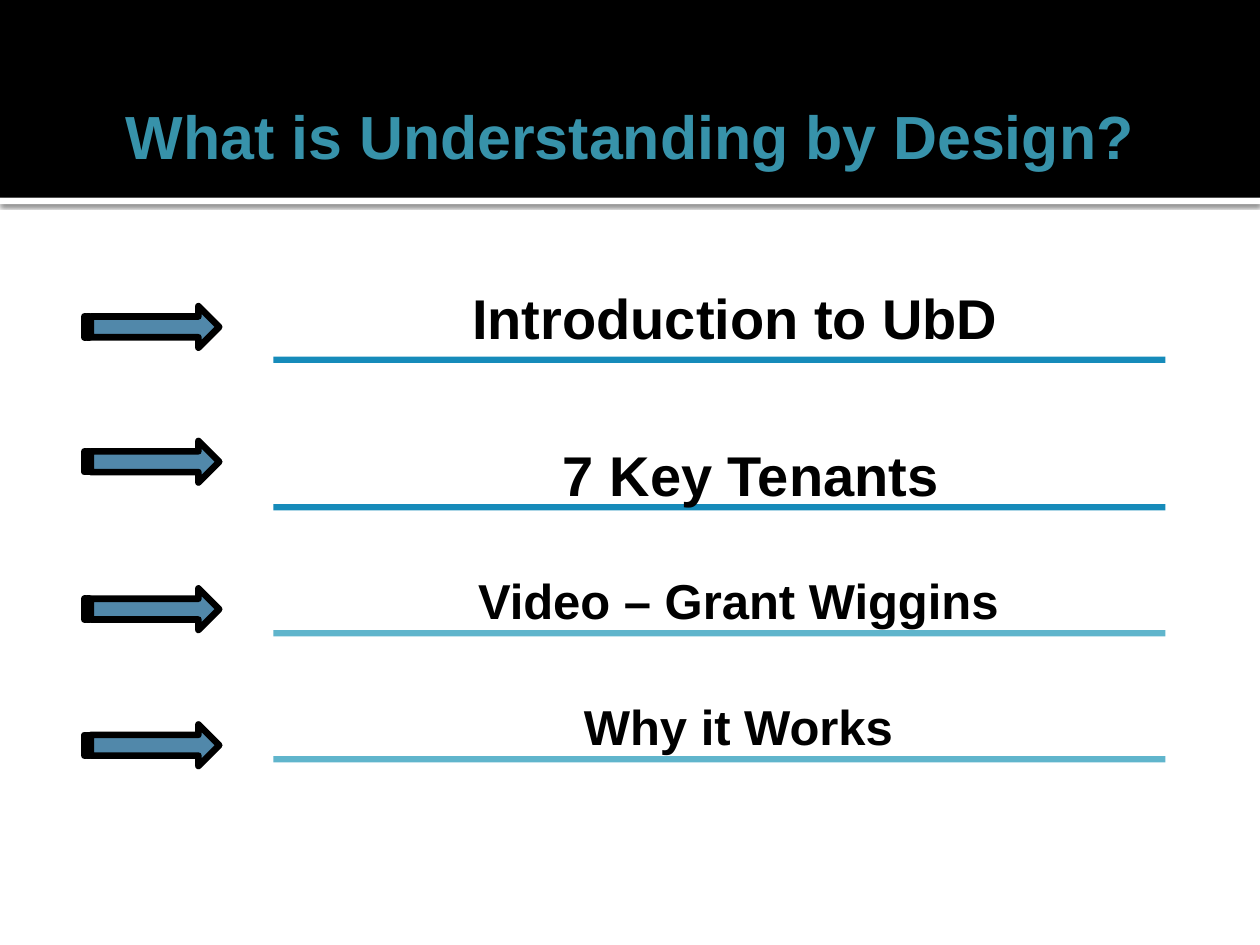
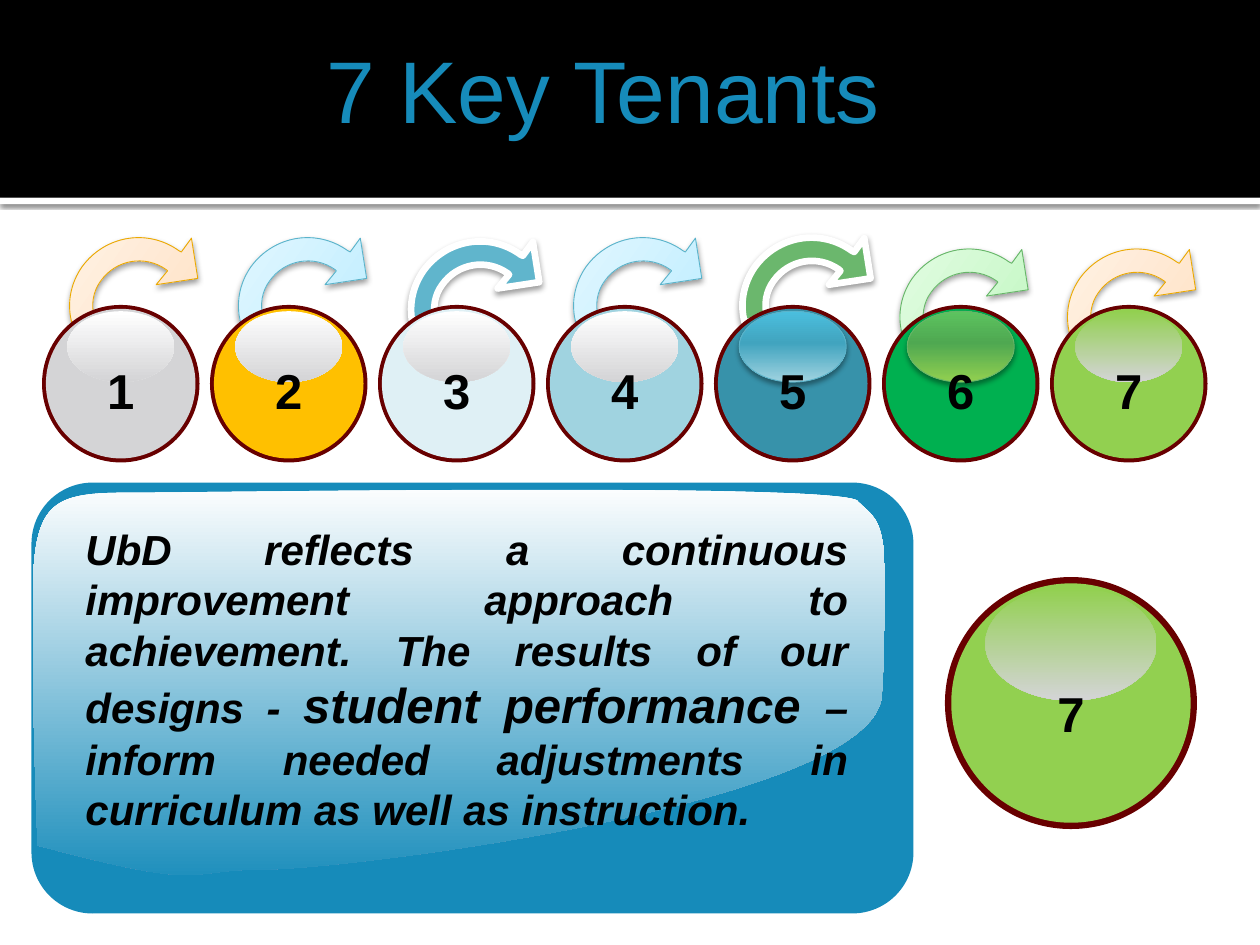
from math import cos, radians, sin

from pptx import Presentation
from pptx.dml.color import RGBColor
from pptx.enum.shapes import MSO_SHAPE
from pptx.enum.text import MSO_ANCHOR, MSO_AUTO_SIZE, PP_ALIGN
from pptx.oxml import parse_xml
from pptx.oxml.ns import nsdecls, qn
from pptx.util import Inches, Pt

RECT = MSO_SHAPE.RECTANGLE
ROUND_RECT = MSO_SHAPE.ROUNDED_RECTANGLE
OVAL = MSO_SHAPE.OVAL
STRIPED_ARROW = MSO_SHAPE.STRIPED_RIGHT_ARROW
MIDDLE, BOTTOM = MSO_ANCHOR.MIDDLE, MSO_ANCHOR.BOTTOM
CENTER, JUSTIFY = PP_ALIGN.CENTER, PP_ALIGN.JUSTIFY
NO_AUTOFIT = MSO_AUTO_SIZE.NONE

FONT = "Arial"
BLACK, WHITE = "000000", "FFFFFF"
BLUE, TEAL, SKY = "168BBA", "3792AA", "60B5CC"
STEEL, MAROON = "35759D", "680000"
SILVER, LIME, PALE_TEAL = "D4D4D6", "92D050", "A0D3E0"
ARROW_SHADOW, GLOSS_SHADOW = (38, 3.5, 2), (38, 3.1, 2)

ORANGE_ARROW = ([(0, "FFDBB5"), (35, "FFE5CB"), (100, "FFF5EB")], "EBA900", 0.5)
BLUE_ARROW = ([(0, "ADE9FF"), (35, "C5EFFF"), (100, "E9F9FF")], "5BB3CA", 0.5)
GREEN_ARROW = ([(0, "B0F6B1"), (35, "C8F8C8"), (100, "E9FDE9")], "67B569", 0.5)
SKY_ARROW = (SKY, WHITE, 3.82)
LEAF_ARROW = ("6BB76D", WHITE, 3.82)

SILVER_GLOSS = ([(0, WHITE), (100, SILVER)], 90, None)
LIME_GLOSS = ([(0, LIME), (100, SILVER)], 90, None)
TEAL_GLOSS = ([(0, PALE_TEAL), (55, "41A4BF"), (100, "4BBFDE")], 270, "5BB3CA")
GREEN_GLOSS = ([(0, LIME), (55, "4FA851"), (100, "5CC35F")], 270, "67B569")

AGENDA = [
    ("Introduction to UbD", 32, (2.25, 2.17, 7.08, 0.69), 0, 0.19, 2.43, 2.83, BLUE),
    ("7 Key Tenants", 32, (2.42, 3.42, 7.08, 0.69), 0, 0.1, 3.5, 4, BLUE),
    ("Video – Grant Wiggins", 28, (2.25, 4.42, 7, 0.69), 0.17, 0.32, 4.67, 5, SKY),
    ("Why it Works", 28, (2.25, 5.42, 7, 0.69), 0.17, 0.32, 5.75, 6, SKY),
]
TENANTS = [
    (SILVER, SILVER_GLOSS, ORANGE_ARROW, 0.55, 1.88),
    ("FFC000", SILVER_GLOSS, BLUE_ARROW, 1.89, 1.88),
    ("DFF0F5", SILVER_GLOSS, SKY_ARROW, 3.26, 1.91),
    (PALE_TEAL, SILVER_GLOSS, BLUE_ARROW, 4.55, 1.88),
    (TEAL, TEAL_GLOSS, LEAF_ARROW, 5.89, 1.88),
    ("00B050", GREEN_GLOSS, GREEN_ARROW, 7.14, 1.97),
    (LIME, LIME_GLOSS, ORANGE_ARROW, 8.47, 1.97),
]
SUMMARY = [
    ("UbD reflects a continuous improvement approach to achievement. "
     "The results of our designs - ", 24),
    ("student performance ", 28),
    ("– inform needed adjustments in curriculum as well as instruction.", 24),
]

CURVED_ARROW = [
    [(0.78, 0.27)],
    [(0.77, 0.26), (0.77, 0.26), (0.77, 0.26)],
    [(0.6, 0.14), (0.37, 0.18), (0.25, 0.35)],
    [(0.19, 0.43), (0.17, 0.54), (0.2, 0.64)],
    [(0.02, 0.68)],
    [(-0.02, 0.53), (0.01, 0.37), (0.1, 0.24)],
    [(0.28, -0.01), (0.62, -0.07), (0.87, 0.11)],
    [(0.88, 0.11), (0.88, 0.11), (0.89, 0.12)],
    [(0.97, 0.01)], [(1.02, 0.33)], [(0.69, 0.38)], [(0.78, 0.27)],
]
CARD_GLOSS = [
    [(0.01, 1.09)],
    [(0, 0.16), (0.11, 0.08), (0.78, 0.08)],
    [(1.44, 0.08), (6.24, 0), (6.55, 0.14)],
    [(6.73, 0.33), (6.83, 0.22), (6.75, 1.67)],
    [(6.75, 2.54), (2.51, 3.07), (1.85, 3.07)],
    [(1.18, 3.07), (1.44, 3.25), (0.05, 2.88)],
    [(0.05, 2.88), (0.01, 1.96), (0.01, 1.09)],
]


def color(code):
    return RGBColor.from_string(code)


def paint(shape, fill, angle=0, line=None, width=0.5, shadow=None):
    if fill is None:
        shape.fill.background()
    elif isinstance(fill, str):
        shape.fill.solid()
        shape.fill.fore_color.rgb = color(fill)
    else:
        stops = "".join(
            f'<a:gs pos="{place * 1000}"><a:srgbClr val="{code}"/></a:gs>'
            for place, code in fill)
        shape.fill.background()
        properties = shape.element.spPr
        properties.replace(properties.find(qn("a:noFill")), parse_xml(
            f'<a:gradFill {nsdecls("a")} rotWithShape="1"><a:gsLst>{stops}</a:gsLst>'
            f'<a:lin ang="{angle * 60000}" scaled="0"/></a:gradFill>'))
    if line:
        shape.line.color.rgb = color(line)
        shape.line.width = Pt(width)
    else:
        shape.line.fill.background()
    shape.shadow.inherit = False
    if shadow:
        alpha, blur, distance = shadow
        shape.element.spPr.find(qn("a:effectLst")).append(parse_xml(
            f'<a:outerShdw {nsdecls("a")} blurRad="{Pt(blur)}" dist="{Pt(distance)}" '
            f'dir="5400000" algn="t" rotWithShape="0"><a:srgbClr val="{BLACK}">'
            f'<a:alpha val="{alpha * 1000}"/></a:srgbClr></a:outerShdw>'))


def add_shape(slide, kind, box, fill, **look):
    shape = slide.shapes.add_shape(kind, *map(Inches, box))
    paint(shape, fill, **look)
    return shape


def add_outline(slide, box, segments, fill, turn=0, **look):
    left, top, width, height = map(Inches, box)
    builder = slide.shapes.build_freeform(left, top, scale=1.0)
    builder.add_line_segments([(left + width, top), (left + width, top + height),
                               (left, top + height)], close=True)
    shape = builder.convert_to_shape()
    middle_x, middle_y = box[2] / 2, box[3] / 2
    cosine, sine = cos(radians(turn)), sin(radians(turn))

    def point(x, y):
        x, y = x - middle_x, y - middle_y
        across = Inches(middle_x + x * cosine + y * sine)
        down = Inches(middle_y - x * sine + y * cosine)
        return f'<a:pt x="{across}" y="{down}"/>'

    outline = shape.element.spPr.find(".//" + qn("a:path"))
    for old in list(outline):
        outline.remove(old)
    for index, segment in enumerate(segments):
        tag = "moveTo" if index == 0 else "lnTo" if len(segment) == 1 else "cubicBezTo"
        points = "".join(point(x, y) for x, y in segment)
        outline.append(parse_xml(f'<a:{tag} {nsdecls("a")}>{points}</a:{tag}>'))
    outline.append(parse_xml(f'<a:close {nsdecls("a")}/>'))
    shape.rotation = turn
    paint(shape, fill, **look)


def write(shape, spans, code=BLACK, bold=True, italic=False,
          align=CENTER, anchor=MIDDLE, wrap=False):
    frame = shape.text_frame
    frame.word_wrap = wrap
    frame.auto_size = NO_AUTOFIT
    frame.vertical_anchor = anchor
    para = frame.paragraphs[0]
    para.alignment = align
    for text, size in spans:
        span = para.add_run()
        span.text = text
        span.font.name = FONT
        span.font.size = Pt(size)
        span.font.bold = bold
        span.font.italic = italic
        span.font.color.rgb = color(code)
    return para


def add_label(slide, box, text, size, corner=0.17, inset=0.1):
    label = add_shape(slide, ROUND_RECT, box, None)
    label.adjustments[0] = corner
    label.text_frame.margin_left = Inches(inset)
    write(label, [(text, size)])


def set_title(slide, box, text, size, code, bold):
    title = slide.shapes.title
    title.left, title.top, title.width, title.height = map(Inches, box)
    return write(title, [(text, size)], code, bold)


def put_bands_on_layout(layout, slide):
    strip = add_shape(slide, RECT, (0, 1.57, 10, 0.05), WHITE, shadow=(60, 2.5, 0.8))
    band = add_shape(slide, RECT, (0, 0, 10, 1.57), BLACK)
    for place, shape in enumerate((strip, band), 2):
        layout.shapes.element.insert(place, shape.element)


def add_agenda_row(slide, text, size, box, corner, inset, arrow_top, rule_top, rule_color):
    add_shape(slide, RECT, (2.17, rule_top, 7.08, 0.05), rule_color)
    arrow = add_shape(slide, STRIPED_ARROW, (0.67, arrow_top, 1.07, 0.33), STEEL,
                      line=BLACK, width=3.78)
    properties = arrow.element.spPr
    tint = properties.find(qn("a:solidFill"))[0]
    tint.append(parse_xml(f'<a:alpha {nsdecls("a")} val="86000"/>'))
    properties.find(qn("a:ln")).append(parse_xml(f'<a:round {nsdecls("a")}/>'))
    add_label(slide, box, text, size, corner, inset)


def add_orb(slide, left, top, size, number, fill, gloss):
    def part(y, width, height):
        return left + (1 - width) / 2 * size, top + y * size, width * size, height * size

    stops, angle, edge = gloss
    add_shape(slide, OVAL, part(0, 1, 1), MAROON)
    add_shape(slide, OVAL, part(0.025, 0.95, 0.95), fill)
    add_shape(slide, OVAL, part(0.04, 0.68, 0.45), stops, angle=angle,
              line=edge, shadow=GLOSS_SHADOW if edge else None)
    add_label(slide, part(0.34, 0.43, 0.4), str(number), 28)


def add_summary_card(slide, left, top, width, height):
    card = add_shape(slide, ROUND_RECT, (left, top, width, height), BLUE)
    card.adjustments[0] = 0.142
    add_outline(slide, (left, top, width - 0.17, height - 0.17), CARD_GLOSS,
                [(0, WHITE), (100, BLUE)], angle=90)
    box = left + 0.33, top + 0.25, width - 0.75, height - 0.83
    write(slide.shapes.add_textbox(*map(Inches, box)), SUMMARY,
          italic=True, align=JUSTIFY, anchor=BOTTOM, wrap=True)


def build_agenda(slide):
    para = set_title(slide, (0.25, 0, 9.5, 1.58), "What is Understanding by Design?",
                     60, TEAL, True)
    para.runs[0].font._element.set("baseline", "-25000")
    for row in AGENDA:
        add_agenda_row(slide, *row)


def build_tenants(slide):
    set_title(slide, (1, 0.33, 7.58, 0.75), "7 Key Tenants", 50, BLUE, False)
    for _, _, (fill, line, width), left, top in reversed(TENANTS):
        add_outline(slide, (left, top, 1.1, 1.11), CURVED_ARROW, fill, turn=305.1,
                    angle=270, line=line, width=width, shadow=ARROW_SHADOW)
    for index, (fill, gloss, *_) in enumerate(TENANTS):
        add_orb(slide, (4 * index + 1) / 3, 2.42, 1.25, index + 1, fill, gloss)
    add_orb(slide, 7.5, 4.58, 2, 7, LIME, LIME_GLOSS)
    add_summary_card(slide, 0.25, 3.83, 7, 3.42)


def main():
    deck = Presentation()
    deck.slide_width, deck.slide_height = Inches(10), Inches(7.5)
    layout = deck.slide_layouts[5]
    agenda, tenants = (deck.slides.add_slide(layout) for _ in range(2))
    put_bands_on_layout(layout, agenda)
    build_agenda(agenda)
    build_tenants(tenants)
    deck.save("out.pptx")


if __name__ == "__main__":
    main()
